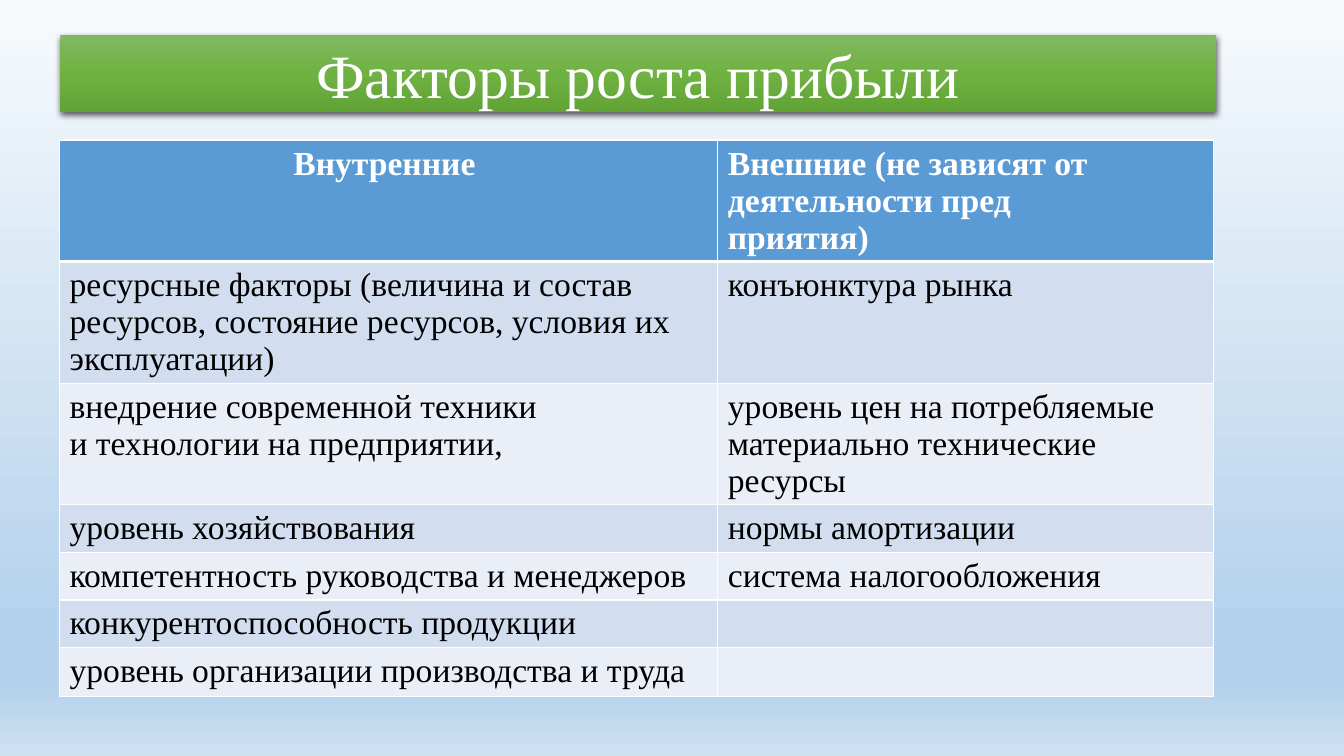
from lxml.etree import SubElement
from pptx import Presentation
from pptx.dml.color import RGBColor
from pptx.enum.text import MSO_ANCHOR as Anchor, MSO_AUTO_SIZE as AutoSize, PP_ALIGN as Align
from pptx.oxml.ns import qn
from pptx.util import Cm, Pt

FONT = "Times New Roman"
WHITE, BLACK, HEADER = "FFFFFF", "000000", "5B9BD5"
BANDS = ("D2DEEF", "EAEFF7")
SKY = [(0, "F7FAFD"), (83, "B5D2EC"), (91, "B5D2EC"), (100, "CEE1F2")]
GREEN = [(0, "81B861"), (50, "6FB242"), (100, "62A336")]
COLUMNS = (16.59, 12.5)
HEIGHTS = (3.06, 3.06, 3.06, 1.2, 1.2, 1.2, 1.24)
FACTORS = [
    (["Внутренние "], ["Внешние (не зависят от деятельности пред", "приятия)"]),
    (["ресурсные факторы (величина и состав ресурсов, состояние ресурсов, условия их эксплуатации)"],
     ["конъюнктура рынка"]),
    (["внедрение современной техники", "и технологии на предприятии,"],
     ["уровень цен на потребляемые материально технические ресурсы"]),
    (["уровень хозяйствования"], ["нормы амортизации"]),
    (["компетентность руководства и менеджеров"], ["система налогообложения"]),
    (["конкурентоспособность продукции"], []),
    (["уровень организации производства и труда"], []),
]


def color(value):
    """Return the colour for a hex string."""
    return RGBColor.from_string(value)


def add_color(parent, value):
    """Append a solid colour element to parent and return it."""
    return SubElement(parent, qn("a:srgbClr"), val=value)


def paint_gradient(fill, owner, stops):
    """Fill the owner from top to bottom with the given stops."""
    fill.gradient()
    fill.gradient_angle = 270
    stop_list = next(owner.iter(qn("a:gsLst")))
    for default in list(stop_list):
        stop_list.remove(default)
    for position, value in stops:
        add_color(SubElement(stop_list, qn("a:gs"), pos=str(position * 1000)), value)


def add_text(paragraph, text, size, value, bold=False):
    """Add one formatted run to a paragraph."""
    run = paragraph.add_run()
    run.text = text
    run.font.name, run.font.size, run.font.bold = FONT, Pt(size), bold
    run.font.color.rgb = color(value)


def add_heading(slide, left, top, width, height):
    """Place the title as a green banner with a soft shadow."""
    heading = slide.shapes.title
    heading.left, heading.top, heading.width, heading.height = left, top, width, height
    properties = heading.element.spPr
    paint_gradient(heading.fill, properties, GREEN)
    shadow = SubElement(SubElement(properties, qn("a:effectLst")), qn("a:outerShdw"),
                        blurRad=str(Pt(4.5)), dist=str(Pt(1.5)), dir="5400000",
                        algn="ctr", rotWithShape="0")
    SubElement(add_color(shadow, BLACK), qn("a:alpha"), val="63000")
    frame = heading.text_frame
    frame.auto_size, frame.word_wrap = AutoSize.NONE, True
    frame.vertical_anchor = Anchor.MIDDLE
    frame.paragraphs[0].alignment = Align.CENTER
    add_text(frame.paragraphs[0], "Факторы роста прибыли", 44, WHITE)


def add_borders(cell, top, bottom):
    """Draw white cell borders with the given top and bottom widths."""
    properties = cell._tc.get_or_add_tcPr()
    for side, width in zip("LRTB", (1, 1, top, bottom)):
        line = SubElement(properties, qn(f"a:ln{side}"), w=str(Pt(width)))
        add_color(SubElement(line, qn("a:solidFill")), WHITE)


def fill_cell(cell, lines, row):
    """Format one cell by its row and write its lines."""
    header = row == 0
    add_borders(cell, 3 if row == 1 else 1, 3 if header else 1)
    cell.fill.solid()
    cell.fill.fore_color.rgb = color(HEADER if header else BANDS[(row - 1) % 2])
    for index, line in enumerate(lines):
        paragraph = cell.text_frame.add_paragraph() if index else cell.text_frame.paragraphs[0]
        add_text(paragraph, line, 24, WHITE if header else BLACK, header)


def add_factors(slide, left, top, width, height):
    """Place the table of internal and external factors."""
    table = slide.shapes.add_table(len(FACTORS), len(COLUMNS), left, top, width, height).table
    for column, share in zip(table.columns, COLUMNS):
        column.width = int(width * share / sum(COLUMNS))
    for row, (cells, share) in enumerate(zip(FACTORS, HEIGHTS)):
        table.rows[row].height = int(height * share / sum(HEIGHTS))
        for column, lines in enumerate(cells):
            fill_cell(table.cell(row, column), lines, row)
    table.cell(0, 0).text_frame.paragraphs[0].alignment = Align.CENTER


def main():
    """Build and save the slide."""
    deck = Presentation()
    deck.slide_width, deck.slide_height = Cm(33.87), Cm(19.05)
    slide = deck.slides.add_slide(deck.slide_layouts[5])
    paint_gradient(slide.background.fill, slide.element, SKY)
    add_heading(slide, Cm(1.52), Cm(0.89), Cm(29.13), Cm(1.93))
    add_factors(slide, Cm(1.5), Cm(3.53), Cm(sum(COLUMNS)), Cm(sum(HEIGHTS)))
    deck.save("out.pptx")


if __name__ == "__main__":
    main()
